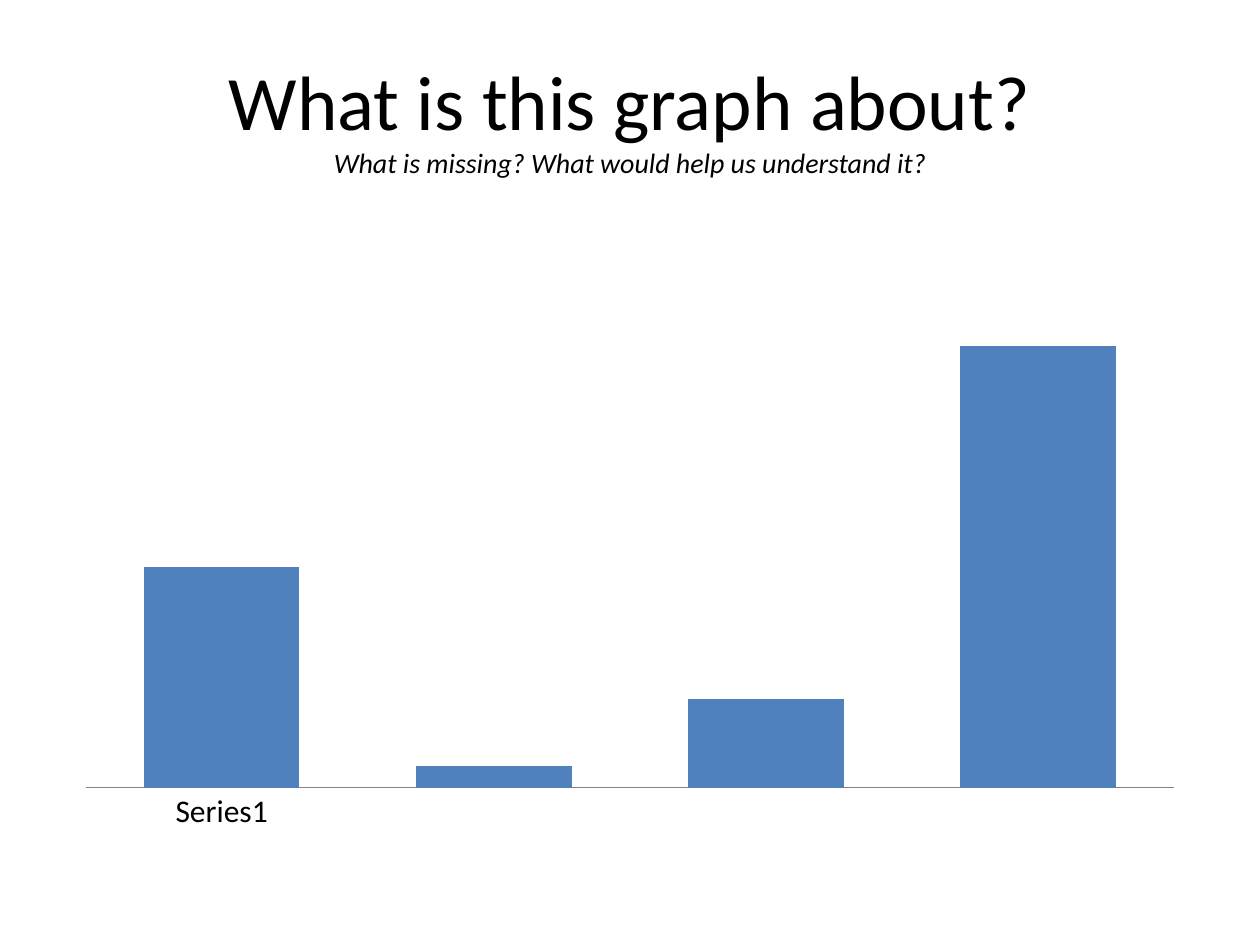
from lxml import etree
from pptx import Presentation
from pptx.chart.data import CategoryChartData
from pptx.dml.color import RGBColor
from pptx.enum.chart import XL_CHART_TYPE, XL_TICK_MARK
from pptx.enum.text import MSO_ANCHOR, PP_ALIGN
from pptx.oxml import parse_xml
from pptx.util import Pt

TITLE = [
    ("What is this graph about?", 44, False),
    ("What is missing? What would help us understand it?", 16, True),
]
CATS = ["Series1", "", "", ""]
VALUES = [50, 5, 20, 100]
PLOT = {"x": 0.02, "y": 0.06, "w": 0.96, "h": 0.85}

FONT = "Calibri"
BLACK = RGBColor(0, 0, 0)
BLUE = RGBColor(0x4F, 0x81, 0xBD)
GRAY = RGBColor(0x86, 0x86, 0x86)
NS = "http://schemas.openxmlformats.org/drawingml/2006/chart"


def px(*nums):
    return [round(n * 914400 / 126) for n in nums]


def style(font, size, italic=False):
    font.name = FONT
    font.size = Pt(size)
    font.italic = italic
    font.color.rgb = BLACK


def add_title(slide):
    frame = slide.shapes.add_textbox(*px(63, 38, 1134, 157)).text_frame
    frame.word_wrap = True
    frame.vertical_anchor = MSO_ANCHOR.MIDDLE
    para = frame.paragraphs[0]
    para.text = "\v".join(text for text, _, _ in TITLE)
    para.alignment = PP_ALIGN.CENTER
    for run, (_, size, italic) in zip(para.runs, TITLE):
        style(run.font, size, italic)


def set_layout(chart):
    area = chart._chartSpace.chart.plotArea
    for old in area.findall(f"{{{NS}}}layout"):
        area.remove(old)
    layout = parse_xml(f'<c:layout xmlns:c="{NS}"><c:manualLayout/></c:layout>')
    modes = {"layoutTarget": "inner", "xMode": "edge", "yMode": "edge"}
    for tag, val in {**modes, **PLOT}.items():
        etree.SubElement(layout[0], f"{{{NS}}}{tag}").set("val", str(val))
    area.insert(0, layout)


def add_bars(slide):
    data = CategoryChartData()
    data.categories = CATS
    data.add_series("Series 1", VALUES)
    chart = slide.shapes.add_chart(
        XL_CHART_TYPE.COLUMN_CLUSTERED, *px(63, 220, 1134, 624), data
    ).chart
    chart.has_title = False
    chart.has_legend = False
    style(chart.font, 18)
    plot = chart.plots[0]
    plot.gap_width = 75
    plot.vary_by_categories = False
    fill = plot.series[0].format.fill
    fill.solid()
    fill.fore_color.rgb = BLUE
    base = chart.category_axis
    base.major_tick_mark = XL_TICK_MARK.NONE
    base.format.line.color.rgb = GRAY
    base.format.line.width = Pt(0.75)
    scale = chart.value_axis
    scale.visible = False
    scale.has_major_gridlines = False
    scale.minimum_scale = 0
    scale.maximum_scale = 120
    set_layout(chart)


def main():
    deck = Presentation()
    deck.slide_width, deck.slide_height = px(1260, 945)
    slide = deck.slides.add_slide(deck.slide_layouts[6])
    add_title(slide)
    add_bars(slide)
    deck.save("out.pptx")


if __name__ == "__main__":
    main()
